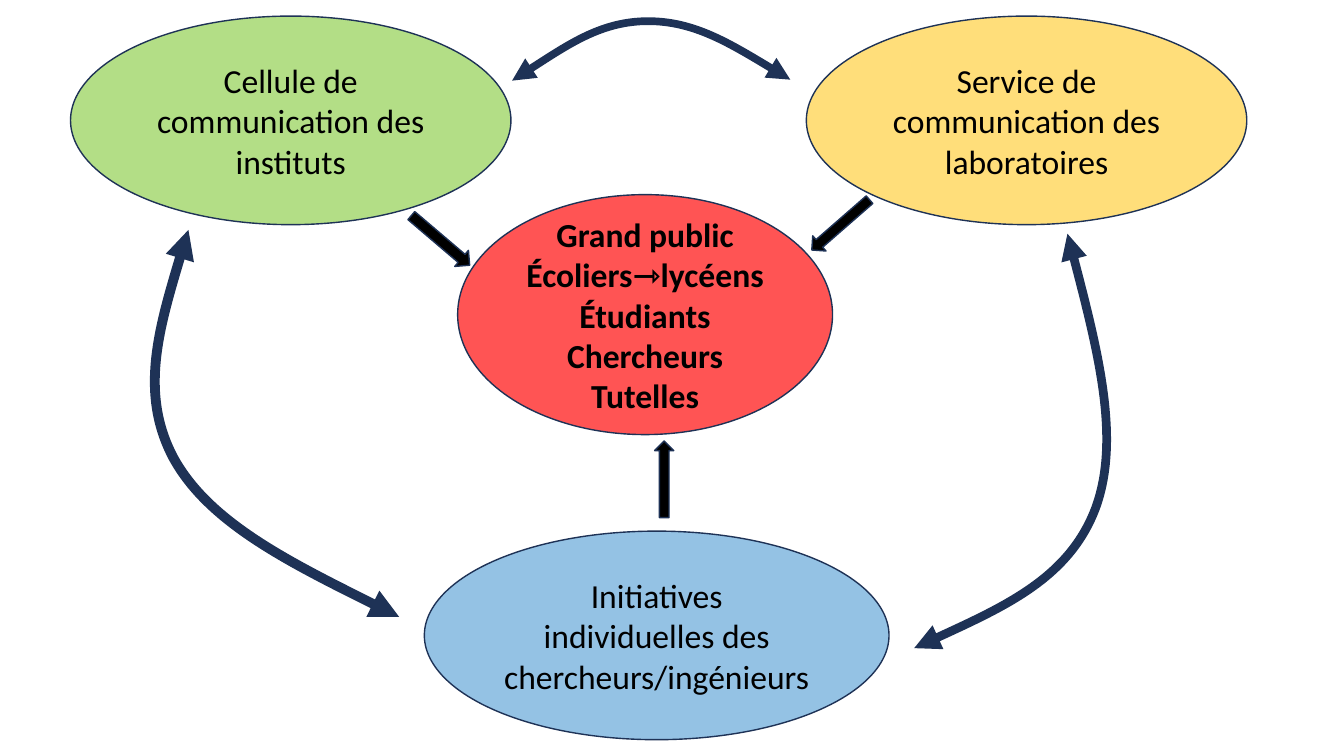
from dataclasses import dataclass

from lxml import etree
from pptx import Presentation
from pptx.dml.color import RGBColor
from pptx.enum.shapes import MSO_SHAPE
from pptx.enum.text import MSO_ANCHOR, PP_ALIGN
from pptx.oxml.ns import qn
from pptx.util import Pt

ELLIPSE = MSO_SHAPE.OVAL
RIGHT_ARROW = MSO_SHAPE.RIGHT_ARROW
MIDDLE = MSO_ANCHOR.MIDDLE
CENTER = PP_ALIGN.CENTER
BLANK_LAYOUT = 6


@dataclass(frozen=True)
class Theme:
    font: str = "Calibri"
    text_size: float = 24
    outline_width: float = 1
    navy: str = "1E3256"
    black: str = "000000"
    green: str = "92D050"
    amber: str = "FFC000"
    blue: str = "0070C0"
    red: str = "FF0000"


THEME = Theme()


@dataclass(frozen=True)
class Bubble:
    left: float
    top: float
    width: float
    height: float
    color: str
    opacity: int  # percent
    lines: tuple[str, ...]
    bold: bool = False


@dataclass(frozen=True)
class BlockArrow:
    left: float
    top: float
    height: float
    rotation: float
    width: float = 54.7


@dataclass(frozen=True)
class CurvedArrow:
    width: float
    points: tuple[tuple[float, float], ...]  # start, then three per Bézier curve


BUBBLES = (
    Bubble(50.4, 11.5, 314.6, 149, THEME.green, 69,
           ("Cellule de communication des instituts",)),
    Bubble(576, 11.5, 314.6, 149, THEME.amber, 52,
           ("Service de communication des laboratoires",)),
    Bubble(303.1, 379.4, 331.9, 149, THEME.blue, 42,
           ("Initiatives individuelles des chercheurs/ingénieurs",)),
    Bubble(326.9, 139, 267.8, 171.4, THEME.red, 67,
           ("Grand public", "Écoliers⇾lycéens", "Étudiants", "Chercheurs", "Tutelles"),
           bold=True),
)

BLOCK_ARROWS = (
    BlockArrow(287.3, 164.2, 15.1, 40.4),
    BlockArrow(573.1, 153.4, 14.4, 138.9),
    BlockArrow(447.1, 335.5, 13.7, 270),
)

CURVED_ARROWS = (
    CurvedArrow(7, ((134.6, 164.2), (116.6, 222.5), (99.4, 280.8), (123.8, 326.9),
                    (149, 373), (216.7, 406.8), (285.1, 440.6))),
    CurvedArrow(6.25, ((653, 463), (708.5, 437.8), (763.9, 412.6), (782.6, 362.9),
                       (800.6, 313.9), (781.9, 240.5), (762.5, 167))),
    CurvedArrow(5.5, ((564.5, 56.9), (529.9, 36), (496.1, 15.1), (463, 15.1),
                      (429.8, 15.1), (398.2, 36.7), (365.8, 57.6))),
)


def set_outline(shape, width: float) -> None:
    shape.shadow.inherit = False
    shape.line.color.rgb = RGBColor.from_string(THEME.navy)
    shape.line.width = Pt(width)


def add_filled_shape(page, kind, item: Bubble | BlockArrow, color: str):
    shape = page.shapes.add_shape(
        kind, Pt(item.left), Pt(item.top), Pt(item.width), Pt(item.height))
    shape.fill.solid()
    shape.fill.fore_color.rgb = RGBColor.from_string(color)
    set_outline(shape, THEME.outline_width)
    return shape


def add_bubble(page, bubble: Bubble) -> None:
    shape = add_filled_shape(page, ELLIPSE, bubble, bubble.color)
    fill_color = shape.element.spPr.find(qn("a:solidFill")).find(qn("a:srgbClr"))
    etree.SubElement(fill_color, qn("a:alpha"), val=str(bubble.opacity * 1000))

    frame = shape.text_frame
    frame.word_wrap = True
    frame.vertical_anchor = MIDDLE
    frame.text = "\n".join(bubble.lines)
    for para in frame.paragraphs:
        para.alignment = CENTER
        para.font.name = THEME.font
        para.font.size = Pt(THEME.text_size)
        para.font.bold = bubble.bold
        para.font.color.rgb = RGBColor.from_string(THEME.black)


def add_block_arrow(page, arrow: BlockArrow) -> None:
    shape = add_filled_shape(page, RIGHT_ARROW, arrow, THEME.black)
    shape.rotation = arrow.rotation


def add_curved_arrow(page, arrow: CurvedArrow) -> None:
    start, *others = [(Pt(x), Pt(y)) for x, y in arrow.points]
    builder = page.shapes.build_freeform(*start)
    builder.add_line_segments(others, close=False)
    shape = builder.convert_to_shape()
    shape.fill.background()
    set_outline(shape, arrow.width)

    # Turn each three straight segments into one Bézier curve
    segments = list(shape.element.iter(qn("a:lnTo")))
    outline = segments[0].getparent()
    for first in range(0, len(segments), 3):
        curve = etree.SubElement(outline, qn("a:cubicBezTo"))
        for segment in segments[first:first + 3]:
            curve.append(segment[0])
            outline.remove(segment)

    # Arrowheads at both ends
    line = shape.element.spPr.find(qn("a:ln"))
    for end in ("a:headEnd", "a:tailEnd"):
        etree.SubElement(line, qn(end), type="triangle")


def main() -> None:
    deck = Presentation()
    deck.slide_width, deck.slide_height = Pt(960), Pt(540)
    page = deck.slides.add_slide(deck.slide_layouts[BLANK_LAYOUT])

    for bubble in BUBBLES:
        add_bubble(page, bubble)
    for block_arrow in BLOCK_ARROWS:
        add_block_arrow(page, block_arrow)
    for curved_arrow in CURVED_ARROWS:
        add_curved_arrow(page, curved_arrow)

    deck.save("out.pptx")


if __name__ == "__main__":
    main()
